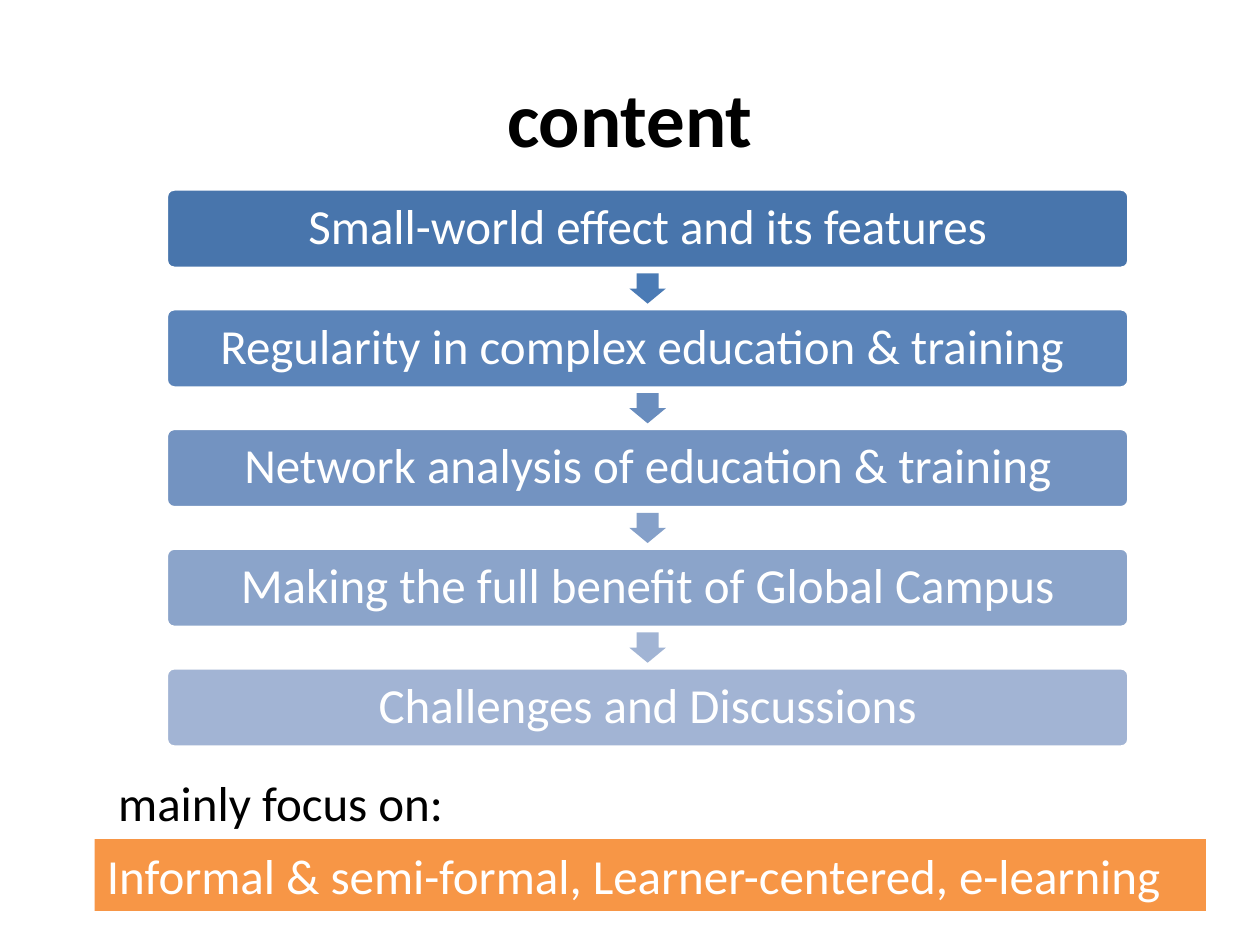
"""Build the content slide: a five-step flow above the focus of the talk."""
from pptx import Presentation
from pptx import util as u
from pptx.dml.color import RGBColor
from pptx.enum import shapes, text

WHITE = RGBColor(255, 255, 255)
BLACK = RGBColor(0, 0, 0)
ORANGE = RGBColor(0xF7, 0x96, 0x46)
TITLE = "content"
FOCUS_LABEL = "mainly focus on:"
FOCUS = "Informal & semi-formal, Learner-centered, e-learning"
STEPS = [
    ("Small-world effect and its features", RGBColor(0x48, 0x75, 0xAC)),
    ("Regularity in complex education & training ", RGBColor(0x5B, 0x84, 0xB9)),
    ("Network analysis of education & training", RGBColor(0x73, 0x93, 0xC1)),
    ("Making the full benefit of Global Campus", RGBColor(0x8B, 0xA4, 0xCA)),
    ("Challenges and Discussions", RGBColor(0xA2, 0xB4, 0xD4)),
]
ARROW_COLORS = [
    RGBColor(0x4B, 0x7B, 0xB5),
    RGBColor(0x69, 0x8D, 0xBE),
    RGBColor(0x85, 0xA0, 0xC9),
    RGBColor(0xA1, 0xB4, 0xD4),
]
STEP_LEFT, STEP_TOP, STEP_WIDTH, STEP_HEIGHT, PITCH = 1.32, 1.5, 7.64, 0.63, 0.95
ARROW_WIDTH, ARROW_HEIGHT = 0.29, 0.24


def write(box, words, size=28, color=WHITE, bold=False, align=text.PP_ALIGN.LEFT,
          anchor=text.MSO_ANCHOR.TOP, wrap=True, spacing=None):
    frame = box.text_frame
    frame.word_wrap = wrap
    frame.vertical_anchor = anchor
    para = frame.paragraphs[0]
    para.alignment = align
    para.line_spacing = spacing
    span = para.add_run()
    span.text = words
    span.font.name = "Calibri"
    span.font.size = u.Pt(size)
    span.font.bold = bold
    span.font.color.rgb = color


def add_shape(page, kind, left, top, width, height, fill, adjustments=()):
    shape = page.shapes.add_shape(kind, *map(u.Inches, (left, top, width, height)))
    shape.shadow.inherit = False
    shape.fill.solid()
    shape.fill.fore_color.rgb = fill
    shape.line.fill.background()
    for index, value in enumerate(adjustments):
        shape.adjustments[index] = value
    return shape


def add_step(page, index, words, fill):
    box = add_shape(page, shapes.MSO_SHAPE.ROUNDED_RECTANGLE, STEP_LEFT,
                    STEP_TOP + index * PITCH, STEP_WIDTH, STEP_HEIGHT, fill, [0.1])
    box.line.color.rgb = WHITE
    box.line.width = u.Pt(2)
    write(box, words, align=text.PP_ALIGN.CENTER, anchor=text.MSO_ANCHOR.MIDDLE, spacing=0.9)


def add_arrow(page, index, fill):
    gap_middle = STEP_TOP + index * PITCH + (STEP_HEIGHT + PITCH) / 2
    add_shape(page, shapes.MSO_SHAPE.DOWN_ARROW,
              STEP_LEFT + (STEP_WIDTH - ARROW_WIDTH) / 2, gap_middle - ARROW_HEIGHT / 2,
              ARROW_WIDTH, ARROW_HEIGHT, fill, [0.6, 0.5])


def main():
    deck = Presentation()
    deck.slide_width, deck.slide_height = u.Inches(10), u.Inches(7.5)
    page = deck.slides.add_slide(deck.slide_layouts[5])

    title = page.shapes.title
    title.left, title.top, title.width, title.height = map(u.Inches, (0.5, 0.3, 9, 1.25))
    write(title, TITLE, size=44, color=BLACK, bold=True,
          align=text.PP_ALIGN.CENTER, anchor=text.MSO_ANCHOR.MIDDLE)

    banner = add_shape(page, shapes.MSO_SHAPE.RECTANGLE, 0.75, 6.66, 8.82, 0.57, ORANGE)
    write(banner, FOCUS)
    label = page.shapes.add_textbox(*map(u.Inches, (0.84, 6.08, 2.9, 0.57)))
    write(label, FOCUS_LABEL, color=BLACK, wrap=False)

    for index, (words, fill) in enumerate(STEPS):
        add_step(page, index, words, fill)
    for index, fill in enumerate(ARROW_COLORS):
        add_arrow(page, index, fill)

    deck.save("out.pptx")


if __name__ == "__main__":
    main()
